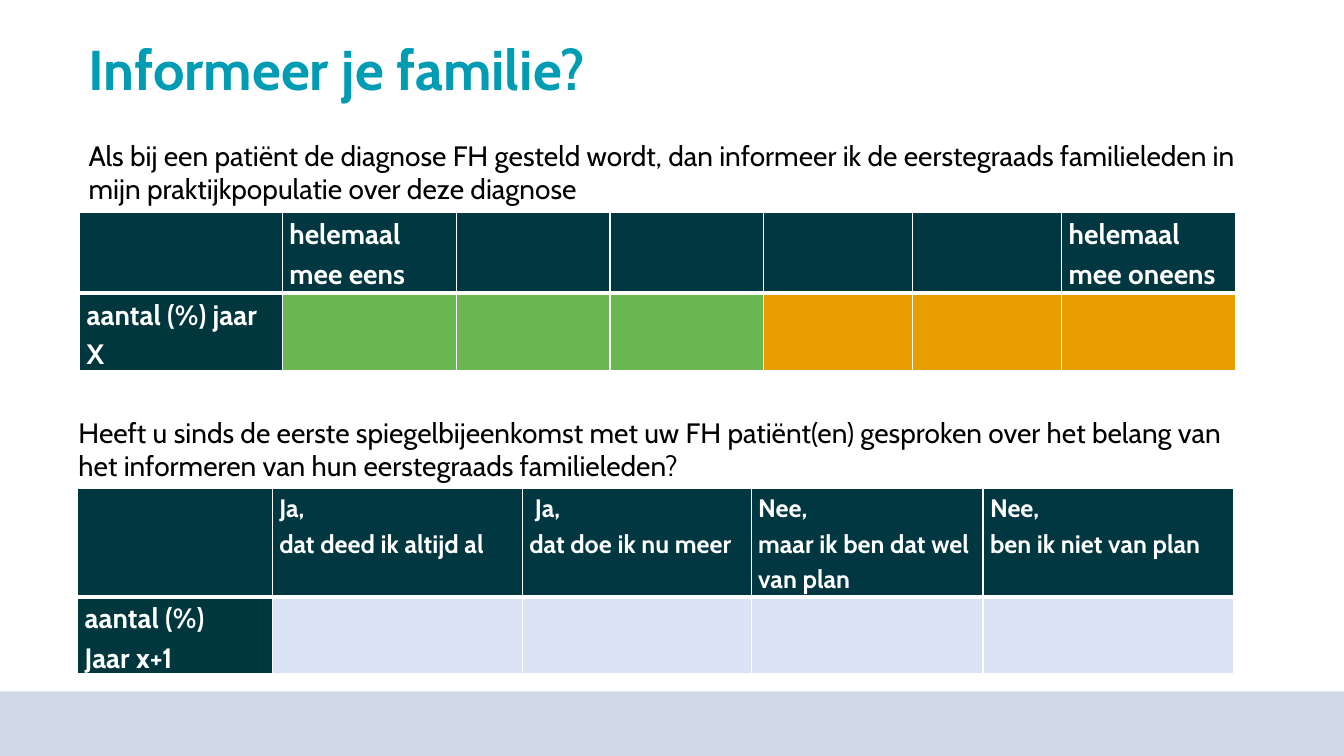
from dataclasses import dataclass

from lxml.etree import SubElement
from pptx import Presentation
from pptx.dml.color import RGBColor
from pptx.enum.shapes import MSO_SHAPE
from pptx.enum.text import MSO_ANCHOR, PP_ALIGN
from pptx.oxml.ns import qn
from pptx.util import Inches, Pt


@dataclass(frozen=True)
class Theme:
    font: str = "Cabin"
    title_size: int = 40
    body_size: int = 20
    small_size: int = 18
    title: str = "009CB4"
    text: str = "000000"
    white: str = "FFFFFF"
    header: str = "003741"
    row_label: str = "00373E"
    agree: str = "6AB650"
    disagree: str = "E89E00"
    neutral: str = "DAE3F3"
    band: str = "CED9E5"


THEME = Theme()


@dataclass(frozen=True)
class Box:
    left: float
    top: float
    width: float
    height: float

    def lengths(self):
        return [Inches(n) for n in (self.left, self.top, self.width, self.height)]


def format_text(frame, size, color, bold=False, line_spacing=None):
    for para in frame.paragraphs:
        para.line_spacing = line_spacing
        for span in para.runs:
            span.font.name = THEME.font
            span.font.size = Pt(size)
            span.font.bold = bold
            span.font.color.rgb = RGBColor.from_string(color)


def add_title(page, box, text):
    title = page.shapes.title
    title.left, title.top, title.width, title.height = box.lengths()
    frame = title.text_frame
    frame.text = text
    frame.vertical_anchor = MSO_ANCHOR.MIDDLE
    frame.paragraphs[0].alignment = PP_ALIGN.LEFT
    format_text(frame, THEME.title_size, THEME.title, True, 0.9)


def add_band(page, box):
    band = page.shapes.add_shape(MSO_SHAPE.RECTANGLE, *box.lengths())
    band.shadow.inherit = False
    band.fill.solid()
    band.fill.fore_color.rgb = RGBColor.from_string(THEME.band)
    band.line.fill.background()


def add_question(page, box, text):
    frame = page.shapes.add_textbox(*box.lengths()).text_frame
    frame.word_wrap = True
    frame.text = text
    format_text(frame, THEME.body_size, THEME.text)


def add_borders(cell, top, bottom):
    """Draw white cell borders; top and bottom are widths in points."""
    properties = cell._tc.get_or_add_tcPr()
    for side, width in (("L", 1), ("R", 1), ("T", top), ("B", bottom)):
        line = SubElement(properties, qn(f"a:ln{side}"), w=str(Pt(width)))
        fill = SubElement(line, qn("a:solidFill"))
        SubElement(fill, qn("a:srgbClr"), val=THEME.white)


def style_cell(cell, text, size, color, top, bottom):
    add_borders(cell, top, bottom)
    cell.fill.solid()
    cell.fill.fore_color.rgb = RGBColor.from_string(color)
    if text:
        cell.margin_left = cell.margin_right = Inches(0.07)
        cell.margin_top = cell.margin_bottom = 0
        cell.text_frame.text = text
        format_text(cell.text_frame, size, THEME.white, True, 1.15)


def add_answers(page, box, widths, heights, headers, header_size, label, fills):
    """Add a header row over one labelled row of coloured answer cells."""
    table = page.shapes.add_table(2, len(widths), *box.lengths()).table
    for column, width in zip(table.columns, widths):
        column.width = Inches(width)
    for row, height in zip(table.rows, heights):
        row.height = Inches(height)
    for index, header in enumerate([""] + headers):
        style_cell(table.cell(0, index), header, header_size, THEME.header, 1, 3)
    for index, color in enumerate([THEME.row_label] + fills):
        style_cell(table.cell(1, index), "" if index else label,
                   THEME.body_size, color, 3, 1)


def build_survey_page(deck):
    page = deck.slides.add_slide(deck.slide_layouts[5])
    add_band(page, Box(0, 6.86, 13.33, 0.64))
    add_title(page, Box(0.78, 0.36, 10.68, 0.71), "Informeer je familie?")
    add_question(
        page, Box(0.78, 1.32, 11.65, 0.77),
        "Als bij een patiënt de diagnose FH gesteld wordt, dan informeer ik de "
        "eerstegraads familieleden in mijn praktijkpopulatie over deze diagnose")
    add_answers(
        page, Box(0.79, 2.11, 11.46, 1.57),
        widths=[2.01, 1.73, 1.52, 1.52, 1.48, 1.48, 1.73],
        heights=[0.8, 0.77],
        headers=["helemaal mee eens"] + [""] * 4 + ["helemaal mee oneens"],
        header_size=THEME.body_size,
        label="aantal (%) jaar X",
        fills=[THEME.agree] * 3 + [THEME.disagree] * 3)
    add_question(
        page, Box(0.68, 4.07, 11.58, 0.77),
        "Heeft u sinds de eerste spiegelbijeenkomst met uw FH patiënt(en) gesproken "
        "over het belang van het informeren van hun eerstegraads familieleden?")
    add_answers(
        page, Box(0.77, 4.85, 11.47, 1.84),
        widths=[1.93, 2.48, 2.27, 2.3, 2.49],
        heights=[1.07, 0.75],
        headers=["Ja,\ndat deed ik altijd al", " Ja,\ndat doe ik nu meer",
                 "Nee,\nmaar ik ben dat wel van plan", "Nee,\nben ik niet van plan"],
        header_size=THEME.small_size,
        label="aantal (%)\nJaar x+1",
        fills=[THEME.neutral] * 4)


def main():
    deck = Presentation()
    deck.slide_width = Inches(13.33)
    deck.slide_height = Inches(7.5)
    build_survey_page(deck)
    deck.save("out.pptx")


if __name__ == "__main__":
    main()
